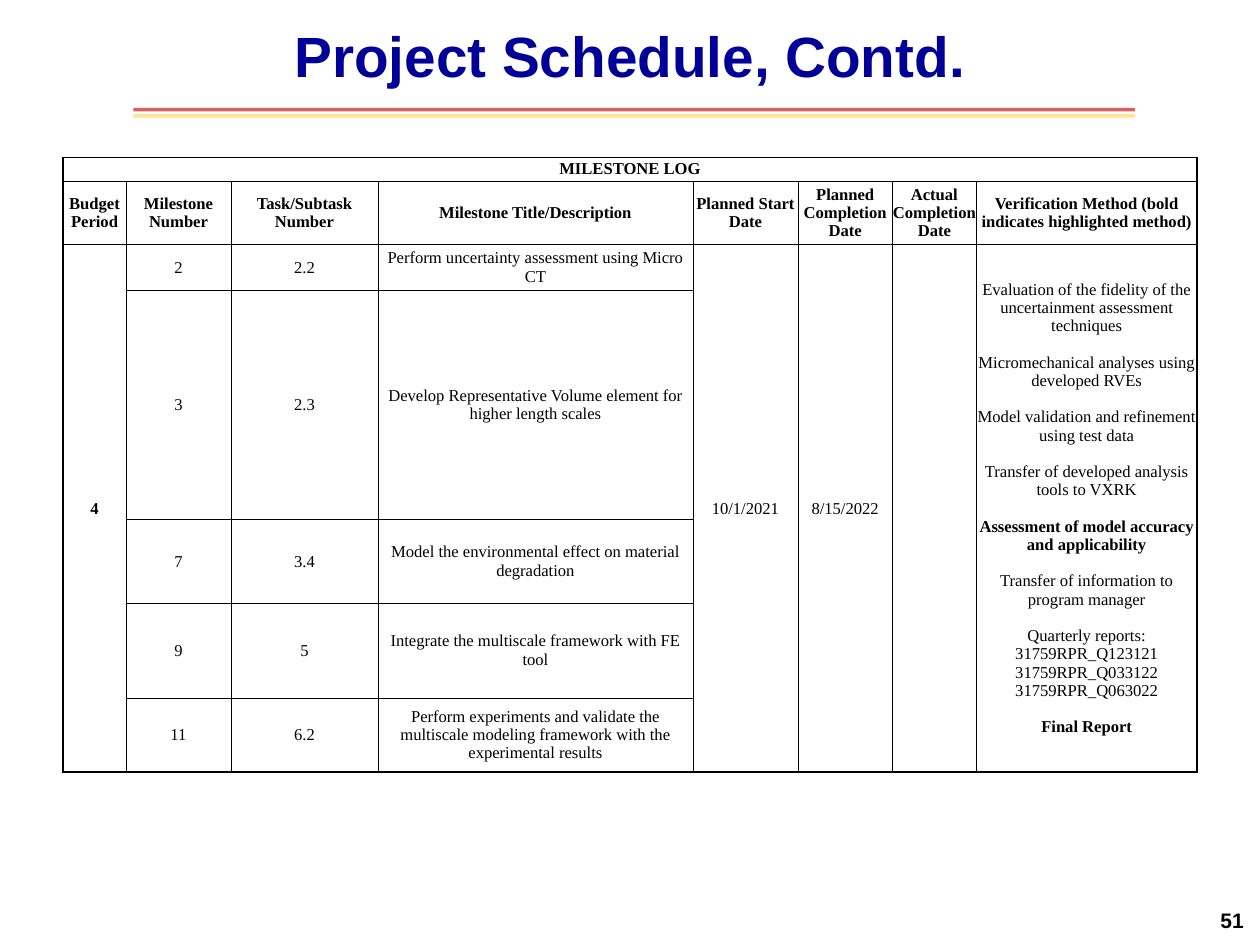
"""Build the milestone log slide of a project schedule."""
from dataclasses import dataclass

from lxml import etree
from pptx import Presentation
from pptx.dml.color import RGBColor
from pptx.enum.shapes import MSO_CONNECTOR
from pptx.enum.text import MSO_ANCHOR, PP_ALIGN
from pptx.oxml.ns import qn
from pptx.util import Pt

STRAIGHT = MSO_CONNECTOR.STRAIGHT
MIDDLE = MSO_ANCHOR.MIDDLE
CENTER, RIGHT = PP_ALIGN.CENTER, PP_ALIGN.RIGHT


@dataclass(frozen=True)
class Theme:
    """Colours, fonts and sizes of the slide."""
    title_color: str = "000099"
    ink: str = "000000"
    red: str = "C00000"
    yellow: str = "FFC000"
    heading_font: str = "Arial"
    table_font: str = "Times New Roman"
    title_size: float = 32.4
    number_size: float = 12
    table_size: float = 9.5
    outer_border: float = 1
    inner_border: float = 0.5
    paragraph_gap: float = 10.4


THEME = Theme()

TITLE = "Project Schedule, Contd."
PAGE_NUMBER = "51"
RULES = [(62.6, THEME.red, 62), (66.2, THEME.yellow, 41)]
RULE_LEFT, RULE_RIGHT = 76.3, 648.7

TABLE_LEFT, TABLE_TOP = 36, 90
COLUMN_WIDTHS = [36, 60, 84, 180, 60, 54, 48, 126]
ROW_HEIGHTS = [13.4, 36.5, 26, 131.2, 47.6, 54.2, 42.4]

LOG_TITLE = "MILESTONE LOG"
HEADERS = [
    "Budget Period", "Milestone Number", "Task/Subtask Number",
    "Milestone Title/Description", "Planned Start Date",
    "Planned Completion Date", "Actual Completion Date",
    "Verification Method (bold indicates highlighted method)",
]
MILESTONES = [
    ("2", "2.2", "Perform uncertainty assessment using Micro CT"),
    ("3", "2.3", "Develop Representative Volume element for higher length scales"),
    ("7", "3.4", "Model the environmental effect on material degradation"),
    ("9", "5", "Integrate the multiscale framework with FE tool"),
    ("11", "6.2", "Perform experiments and validate the multiscale modeling "
                  "framework with the experimental results"),
]
BUDGET_PERIOD, START_DATE, COMPLETION_DATE, ACTUAL_DATE = "4", "10/1/2021", "8/15/2022", ""
VERIFICATION = [
    ("Evaluation of the fidelity of the uncertainment assessment techniques", False),
    ("Micromechanical analyses using developed RVEs", False),
    ("Model validation and refinement using test data", False),
    ("Transfer of developed analysis tools to VXRK", False),
    ("Assessment of model accuracy and applicability", True),
    ("Transfer of information to program manager", False),
    ("Quarterly reports:\v31759RPR_Q123121\v31759RPR_Q033122\v31759RPR_Q063022", False),
    ("Final Report", True),
]
FIRST_MILESTONE_ROW = 2


def set_font(para, family, size, color, bold):
    """Set the font of a whole paragraph."""
    font = para.font
    font.name, font.size, font.bold = family, Pt(size), bold
    font.color.rgb = RGBColor.from_string(color)


def place(shape, left, top, width, height):
    """Move and size a shape in points."""
    shape.left, shape.top = Pt(left), Pt(top)
    shape.width, shape.height = Pt(width), Pt(height)


def write_line(shape, text, align, size, color):
    """Write one bold heading line, centred vertically in its shape."""
    frame = shape.text_frame
    frame.word_wrap = True
    frame.vertical_anchor = MIDDLE
    para = frame.paragraphs[0]
    para.text, para.alignment = text, align
    set_font(para, THEME.heading_font, size, color, True)


def add_rule(page, top, color, opacity):
    """Draw a translucent rule below the title."""
    rule = page.shapes.add_connector(STRAIGHT, Pt(RULE_LEFT), Pt(top), Pt(RULE_RIGHT), Pt(top))
    rule.line.width = Pt(2)
    rule.line.color.rgb = RGBColor.from_string(color)
    paint = rule.element.find(".//" + qn("a:srgbClr"))
    etree.SubElement(paint, qn("a:alpha"), val=str(opacity * 1000))
    etree.SubElement(rule.element.find(qn("p:spPr")), qn("a:effectLst"))


def set_borders(cell, outer_sides):
    """Draw the four cell borders, heavier on the table outline."""
    properties = cell._tc.get_or_add_tcPr()
    for index, side in enumerate("LRTB"):
        width = THEME.outer_border if side in outer_sides else THEME.inner_border
        border = etree.Element(qn("a:ln" + side), w=str(Pt(width)))
        fill = etree.SubElement(border, qn("a:solidFill"))
        etree.SubElement(fill, qn("a:srgbClr"), val=THEME.ink)
        properties.insert(index, border)


def write_cell(cell, entries):
    """Write (text, bold) entries as spaced, centred paragraphs."""
    frame = cell.text_frame
    for index, (text, bold) in enumerate(entries):
        para = frame.add_paragraph() if index else frame.paragraphs[0]
        para.text, para.alignment = text, CENTER
        if index:
            para.space_before = Pt(THEME.paragraph_gap)
        set_font(para, THEME.table_font, THEME.table_size, THEME.ink, bold)


def add_milestone_log(page):
    """Build the milestone table."""
    row_count, column_count = len(ROW_HEIGHTS), len(COLUMN_WIDTHS)
    table = page.shapes.add_table(
        row_count, column_count, Pt(TABLE_LEFT), Pt(TABLE_TOP),
        Pt(sum(COLUMN_WIDTHS)), Pt(sum(ROW_HEIGHTS))).table
    table.first_row = table.horz_banding = False
    for column, width in zip(table.columns, COLUMN_WIDTHS):
        column.width = Pt(width)
    for row, height in zip(table.rows, ROW_HEIGHTS):
        row.height = Pt(height)

    shared = {
        0: [(BUDGET_PERIOD, True)],
        4: [(START_DATE, False)],
        5: [(COMPLETION_DATE, False)],
        6: [(ACTUAL_DATE, False)],
        7: VERIFICATION,
    }
    contents = {(0, 0): [(LOG_TITLE, True)]}
    contents.update({(1, column): [(text, True)] for column, text in enumerate(HEADERS)})
    contents.update({(FIRST_MILESTONE_ROW, column): entries for column, entries in shared.items()})
    for row, milestone in enumerate(MILESTONES, FIRST_MILESTONE_ROW):
        for column, text in enumerate(milestone, 1):
            contents[row, column] = [(text, False)]

    table.cell(0, 0).merge(table.cell(0, column_count - 1))
    for column in shared:
        table.cell(FIRST_MILESTONE_ROW, column).merge(table.cell(row_count - 1, column))

    for row in range(row_count):
        for column in range(column_count):
            cell = table.cell(row, column)
            cell.margin_left = cell.margin_right = cell.margin_top = cell.margin_bottom = 0
            cell.vertical_anchor = MIDDLE
            cell.fill.background()
            last_row = row + (cell.span_height if cell.is_merge_origin else 1)
            last_column = column + (cell.span_width if cell.is_merge_origin else 1)
            edges = {"L": column == 0, "R": last_column == column_count,
                     "T": row == 0, "B": last_row == row_count}
            set_borders(cell, [side for side, on_edge in edges.items() if on_edge])
            write_cell(cell, contents.get((row, column), [("", False)]))


def main():
    """Assemble and save the deck."""
    deck = Presentation()
    deck.slide_width, deck.slide_height = Pt(720), Pt(540)
    page = deck.slides.add_slide(deck.slide_layouts[5])
    for rule in RULES:
        add_rule(page, *rule)
    number_box = page.shapes.add_textbox(Pt(550), Pt(511.2), Pt(167.8), Pt(28.8))
    write_line(number_box, PAGE_NUMBER, RIGHT, THEME.number_size, THEME.ink)
    add_milestone_log(page)
    title = page.shapes.title
    place(title, 96, 12.2, 528, 38.2)
    write_line(title, TITLE, CENTER, THEME.title_size, THEME.title_color)
    deck.save("out.pptx")


if __name__ == "__main__":
    main()
